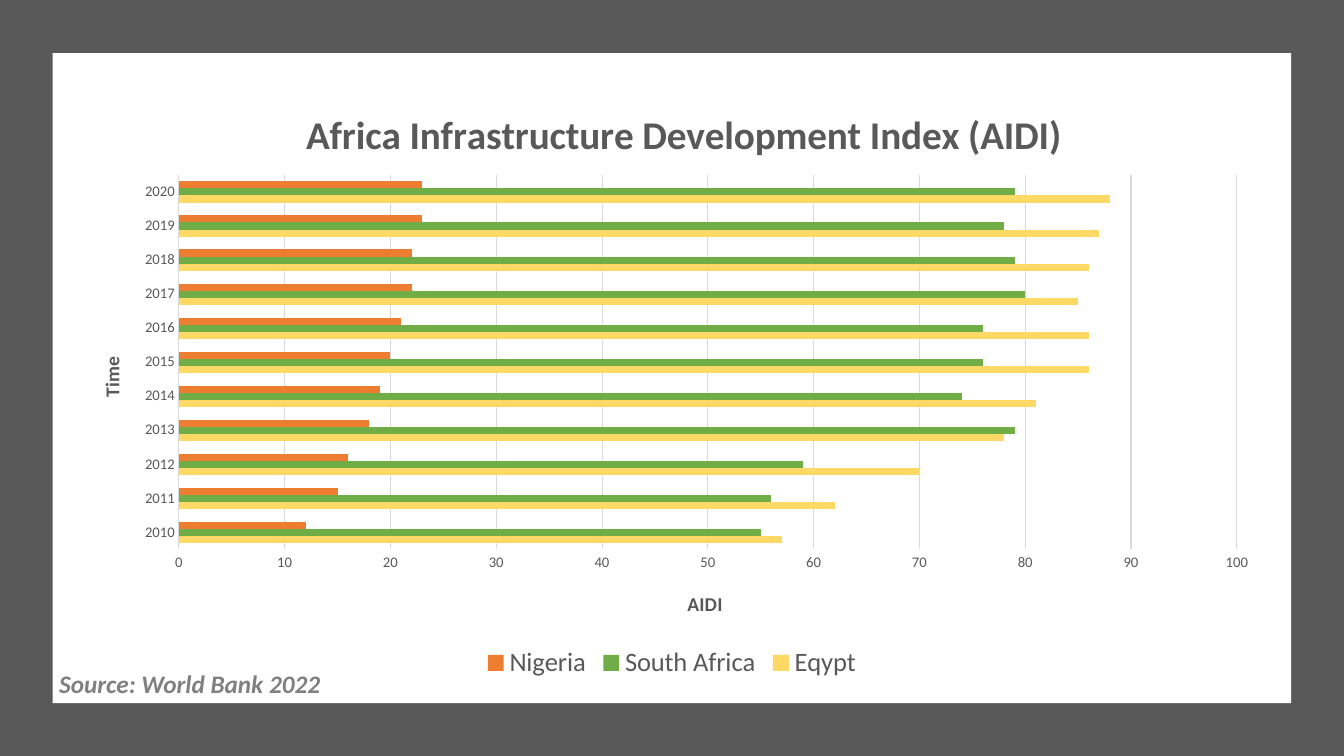
from lxml import etree
from pptx import Presentation
from pptx import util as u
from pptx.chart.data import CategoryChartData
from pptx.dml.color import RGBColor
from pptx.enum import chart as ch, shapes, text
from pptx.oxml import ns

WHITE = RGBColor(0xFF, 0xFF, 0xFF)
DARK = RGBColor(0x59, 0x59, 0x59)
GREY = RGBColor(0x80, 0x80, 0x80)
LIGHT = RGBColor(0xD9, 0xD9, 0xD9)
YELLOW = RGBColor(0xFF, 0xD9, 0x66)
GREEN = RGBColor(0x70, 0xAD, 0x47)
ORANGE = RGBColor(0xED, 0x7D, 0x31)
FONT = "Calibri"

YEARS = [str(year) for year in range(2010, 2021)]
COUNTRIES = [
    ("Eqypt", YELLOW, [57, 62, 70, 78, 81, 86, 86, 85, 86, 87, 88]),
    ("South Africa", GREEN, [55, 56, 59, 79, 74, 76, 76, 80, 79, 78, 79]),
    ("Nigeria", ORANGE, [12, 15, 16, 18, 19, 20, 21, 22, 22, 23, 23]),
]


def style_font(font, size, color=DARK, bold=False, italic=False):
    font.name = FONT
    font.size = u.Pt(size)
    font.bold = bold
    font.italic = italic
    font.color.rgb = color


def write(frame, words, **style):
    para = frame.paragraphs[0]
    span = para.add_run()
    span.text = words
    style_font(span.font, **style)
    return para


def add_panel(page, left, top, width, height, color):
    panel = page.shapes.add_shape(
        shapes.MSO_SHAPE.RECTANGLE, u.Cm(left), u.Cm(top), u.Cm(width), u.Cm(height))
    panel.shadow.inherit = False
    panel.fill.solid()
    panel.fill.fore_color.rgb = color
    panel.line.fill.background()


def set_layout(element, index, inner=False, **fractions):
    for old in element.findall(ns.qn("c:layout")):
        element.remove(old)
    layout = etree.Element(ns.qn("c:layout"))
    manual = etree.SubElement(layout, ns.qn("c:manualLayout"))
    settings = {"layoutTarget": "inner"} if inner else {}
    settings.update(xMode="edge", yMode="edge", **fractions)
    for name, value in settings.items():
        etree.SubElement(manual, ns.qn("c:" + name)).set("val", str(value))
    element.insert(index, layout)


def add_title(title, words, size, x, y):
    write(title.text_frame, words, size=size, bold=True)
    set_layout(title._element, 1, x=x, y=y)


def format_axis(axis, words, x, y):
    axis.major_tick_mark = ch.XL_TICK_MARK.NONE
    axis.minor_tick_mark = ch.XL_TICK_MARK.NONE
    style_font(axis.tick_labels.font, 10.5)
    add_title(axis.axis_title, words, 14, x, y)


def format_line(line):
    line.color.rgb = LIGHT
    line.width = u.Pt(0.75)


def add_index_chart(page):
    data = CategoryChartData(number_format="0")
    data.categories = YEARS
    for name, _, values in COUNTRIES:
        data.add_series(name, values)
    chart = page.shapes.add_chart(
        ch.XL_CHART_TYPE.BAR_CLUSTERED,
        u.Cm(1.78), u.Cm(1.78), u.Cm(30.3), u.Cm(15.47), data).chart
    style_font(chart.font, 10)
    chart.has_title = True
    add_title(chart.chart_title, "Africa Infrastructure Development Index (AIDI)",
              28, 0.19, 0.05)

    plot = chart.plots[0]
    plot.gap_width = 182
    plot.overlap = 0
    plot.vary_by_categories = False
    for series, (_, color, _) in zip(plot.series, COUNTRIES):
        series.format.fill.solid()
        series.format.fill.fore_color.rgb = color

    years, index = chart.category_axis, chart.value_axis
    format_axis(years, "Time", 0.02, 0.46)
    years.axis_title.text_frame._txBody.bodyPr.set("rot", "-5400000")
    years.has_major_gridlines = False
    format_line(years.format.line)
    format_axis(index, "AIDI", 0.51, 0.84)
    index.minimum_scale, index.maximum_scale, index.major_unit = 0, 100, 10
    index.has_major_gridlines = True
    format_line(index.major_gridlines.format.line)
    index.format.line.fill.background()

    chart.has_legend = True
    chart.legend.position = ch.XL_LEGEND_POSITION.BOTTOM
    chart.legend.include_in_layout = False
    style_font(chart.legend.font, 19)
    set_layout(chart._chartSpace.chart.plotArea, 0, inner=True,
               x=0.09, y=0.17, w=0.88, h=0.61)


def add_source(page):
    box = page.shapes.add_textbox(u.Cm(-1.3), u.Cm(15.95), u.Cm(10.77), u.Cm(2.62))
    frame = box.text_frame
    frame.word_wrap = True
    frame.vertical_anchor = text.MSO_ANCHOR.MIDDLE
    para = write(frame, "Source: World Bank 2022",
                 size=18, color=GREY, bold=True, italic=True)
    para.level = 2
    para.line_spacing = 0.9
    para.space_before = u.Pt(5)


def main():
    deck = Presentation()
    deck.slide_width, deck.slide_height = u.Cm(33.87), u.Cm(19.05)
    page = deck.slides.add_slide(deck.slide_layouts[6])
    add_panel(page, 0, 0, 33.87, 19.05, DARK)
    add_panel(page, 1.33, 1.34, 31.21, 16.38, WHITE)
    add_index_chart(page)
    add_source(page)
    deck.save("out.pptx")


if __name__ == "__main__":
    main()
